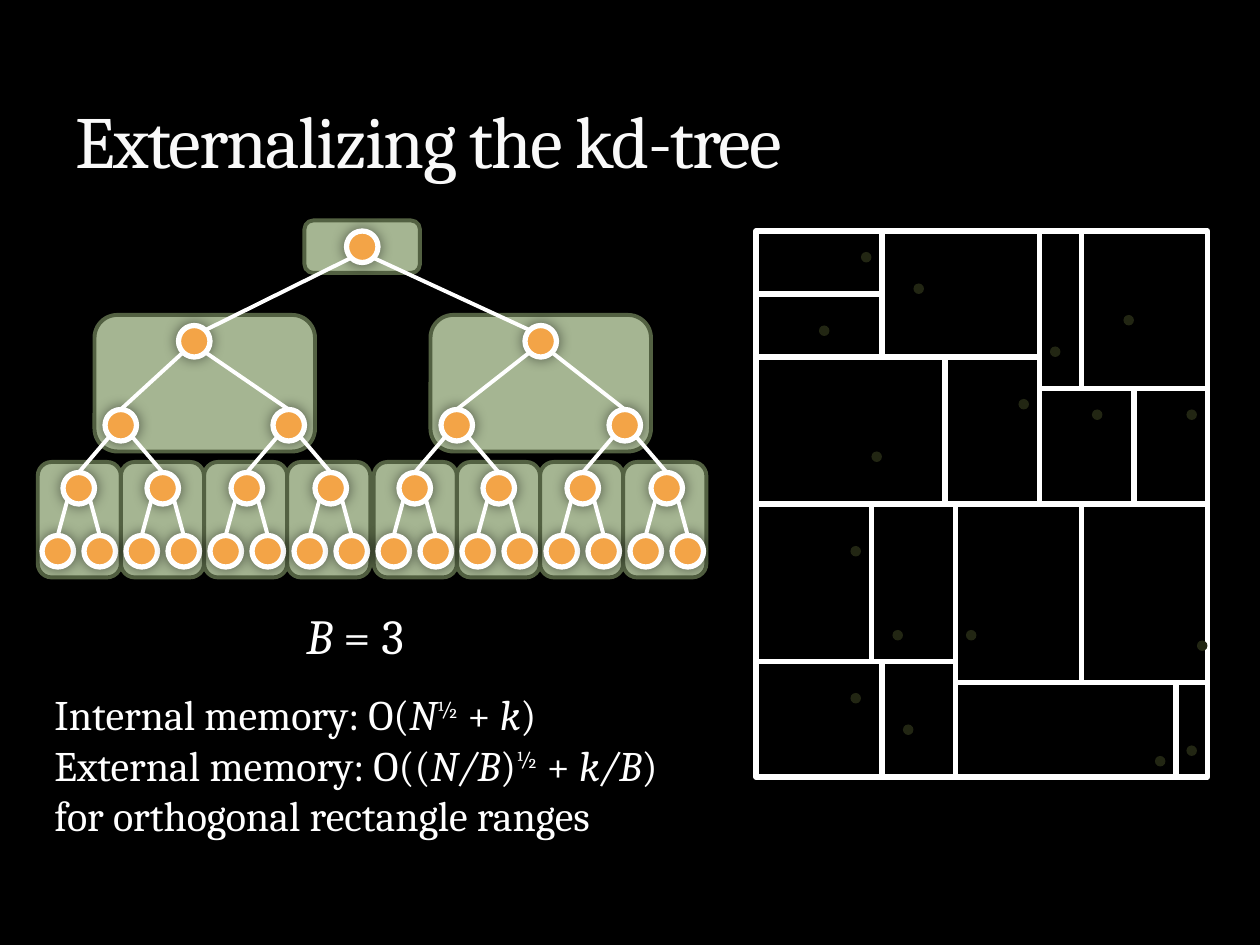
from dataclasses import dataclass
from math import sqrt

from lxml import etree
from pptx import Presentation
from pptx.dml.color import RGBColor
from pptx.enum.shapes import MSO_CONNECTOR, MSO_SHAPE
from pptx.enum.text import MSO_ANCHOR, MSO_AUTO_SIZE
from pptx.oxml.ns import qn
from pptx.util import Cm, Pt

RECT = MSO_SHAPE.RECTANGLE
ROUND = MSO_SHAPE.ROUNDED_RECTANGLE
OVAL = MSO_SHAPE.OVAL
LINE = MSO_CONNECTOR.STRAIGHT
BOTTOM = MSO_ANCHOR.BOTTOM
FIT = MSO_AUTO_SIZE.SHAPE_TO_FIT_TEXT

BLACK = RGBColor(0x00, 0x00, 0x00)
WHITE = RGBColor(0xFF, 0xFF, 0xFF)
PALE = RGBColor(0xF9, 0xF9, 0xF9)
SAGE = RGBColor(0xA5, 0xB5, 0x92)
MOSS = RGBColor(0x53, 0x61, 0x42)
AMBER = RGBColor(0xF3, 0xA4, 0x47)
DARK = RGBColor(0x22, 0x26, 0x13)

FONT = "Cambria"
UNIT = 2.54 / 12  # one grid step in cm
SIZE = 3          # node width in grid steps


@dataclass(frozen=True)
class Box:
    x: float
    y: float
    w: float
    h: float


@dataclass(frozen=True)
class Split:
    x1: float
    y1: float
    x2: float
    y2: float


@dataclass(frozen=True)
class Part:
    text: str
    slant: bool = False
    rise: bool = False


FRAME = Box(72, 22, 43, 52)
BLOCKS = [Box(29, 21, 11, 5), Box(41, 30, 21, 13), Box(9, 30, 21, 13)] + [
    Box(half + 7.92 * i, 44, 7.92, 11) for half in (3.6, 35.6) for i in range(4)]

DOTS = [(114, 61), (85, 60), (107, 30), (113, 39), (81, 66), (87, 27),
        (83, 43), (81, 52), (86, 69), (113, 71), (82, 24), (110, 72),
        (78, 31), (92, 60), (97, 38), (100, 33), (104, 39)]

MEDIAN = Split(72, 48, 115, 48)
SPLITS = [
    Split(99, 22, 99, 48), Split(91, 48, 91, 74), Split(99, 34, 72, 34),
    Split(115, 37, 99, 37), Split(84, 34, 84, 22), Split(90, 48, 90, 34),
    Split(72, 28, 84, 28), Split(103, 22, 103, 37), Split(108, 37, 108, 48),
    Split(91, 63, 72, 63), Split(83, 63, 83, 48), Split(84, 74, 84, 63),
    Split(115, 65, 91, 65), Split(103, 48, 103, 65), Split(112, 65, 112, 74),
]

# Top of each tree level, and the left edges of its nodes
LEVELS = [(22, [33]), (31, [17, 50]), (39, range(10, 59, 16)),
          (45, range(6, 63, 8)), (51, range(4, 65, 4))]

TITLE = [[Part("Externalizing the kd-tree")]]
FACTOR = [[Part("B", slant=True), Part(" = 3")]]
BOUNDS = [
    [Part("Internal memory: O("), Part("N", slant=True), Part("½", rise=True),
     Part(" + "), Part("k", slant=True), Part(")")],
    [Part("External memory: O(("), Part("N/B", slant=True), Part(")"),
     Part("½", rise=True), Part(" + "), Part("k/B", slant=True), Part(")")],
    [Part("for orthogonal rectangle ranges")],
]


def grid(n: float) -> Cm:
    return Cm(n * UNIT)


def add_box(slide, kind, box: Box, fill=None, edge=None, width: float = 0):
    shape = slide.shapes.add_shape(
        kind, grid(box.x), grid(box.y), grid(box.w), grid(box.h))
    shape.shadow.inherit = False
    if fill is None:
        shape.fill.background()
    else:
        shape.fill.solid()
        shape.fill.fore_color.rgb = fill
    if edge is None:
        shape.line.fill.background()
    else:
        shape.line.color.rgb = edge
        shape.line.width = Pt(width)
    return shape


def add_node(slide, x: float, y: float):
    """Draw a tree node with a soft shadow around it."""
    node = add_box(slide, OVAL, Box(x, y, SIZE, SIZE), AMBER, WHITE, 3)
    glow = etree.SubElement(
        node._element.spPr.find(qn("a:effectLst")), qn("a:outerShdw"),
        blurRad=str(Pt(7.5)), dist="0", dir="0", algn="ctr", rotWithShape="0")
    tone = etree.SubElement(glow, qn("a:srgbClr"), val=str(BLACK))
    etree.SubElement(tone, qn("a:alpha"), val="50000")
    return node


def add_line(slide, cut: Split, width: float):
    line = slide.shapes.add_connector(
        LINE, grid(cut.x1), grid(cut.y1), grid(cut.x2), grid(cut.y2))
    line.line.color.rgb = WHITE
    line.line.width = Pt(width)
    etree.SubElement(line._element.spPr, qn("a:effectLst"))
    return line


def add_text(slide, box: Box, rows: list[list[Part]], size: float, color=WHITE):
    shape = slide.shapes.add_textbox(
        grid(box.x), grid(box.y), grid(box.w), grid(box.h))
    frame = shape.text_frame
    frame.word_wrap = False
    frame.auto_size = FIT
    for i, row in enumerate(rows):
        para = frame.add_paragraph() if i else frame.paragraphs[0]
        for part in row:
            run = para.add_run()
            run.text = part.text
            run.font.name = FONT
            run.font.size = Pt(size)
            run.font.italic = part.slant
            run.font.color.rgb = color
            if part.rise:
                run._r.get_or_add_rPr().set("baseline", "30000")
    return frame


def draw_title(slide) -> None:
    frame = add_text(slide, Box(6, 2, 108, 16), TITLE, 42, PALE)
    frame.auto_size = MSO_AUTO_SIZE.NONE
    frame.word_wrap = True
    frame.vertical_anchor = BOTTOM
    frame.paragraphs[0].runs[0]._r.get_or_add_rPr().set("spc", "-100")


def draw_plane(slide) -> None:
    frame = add_box(slide, RECT, FRAME, edge=WHITE, width=3)
    for x, y in DOTS:
        add_box(slide, OVAL, Box(x, y, 1, 1), DARK)
    line = add_line(slide, MEDIAN, 3)
    line.begin_connect(frame, 1)
    line.end_connect(frame, 3)
    for cut in SPLITS:
        add_line(slide, cut, 3)


def draw_tree(slide) -> None:
    for box in BLOCKS:
        add_box(slide, ROUND, box, SAGE, MOSS, 2.25)
    half = SIZE / 2
    slant = half / sqrt(2)  # reach of a node's rim at 45 degrees
    above = []
    for depth, (top, lefts) in enumerate(LEVELS):
        nodes = [(x + half, top + half) for x in lefts]
        for i, (x, y) in enumerate(nodes):
            node = add_node(slide, x - half, top)
            if not above:
                continue
            px, py = above[i // 2]
            side = 1 if i % 2 else -1
            start = px + side * slant, py + slant
            if depth == 1:
                add_line(slide, Split(*start, x - side * slant, y - slant), 2.25)
            else:
                add_line(slide, Split(*start, x, top), 2.25).end_connect(node, 0)
        above = nodes


def main() -> None:
    deck = Presentation()
    deck.slide_width, deck.slide_height = Cm(25.4), Cm(19.05)
    slide = deck.slides.add_slide(deck.slide_layouts[6])
    slide.background.fill.solid()
    slide.background.fill.fore_color.rgb = BLACK
    draw_title(slide)
    draw_plane(slide)
    draw_tree(slide)
    add_text(slide, Box(28, 57.1, 12.7, 6.9), FACTOR, 28)
    add_text(slide, Box(4, 65, 63.2, 15.7), BOUNDS, 24)
    deck.save("out.pptx")


if __name__ == "__main__":
    main()
